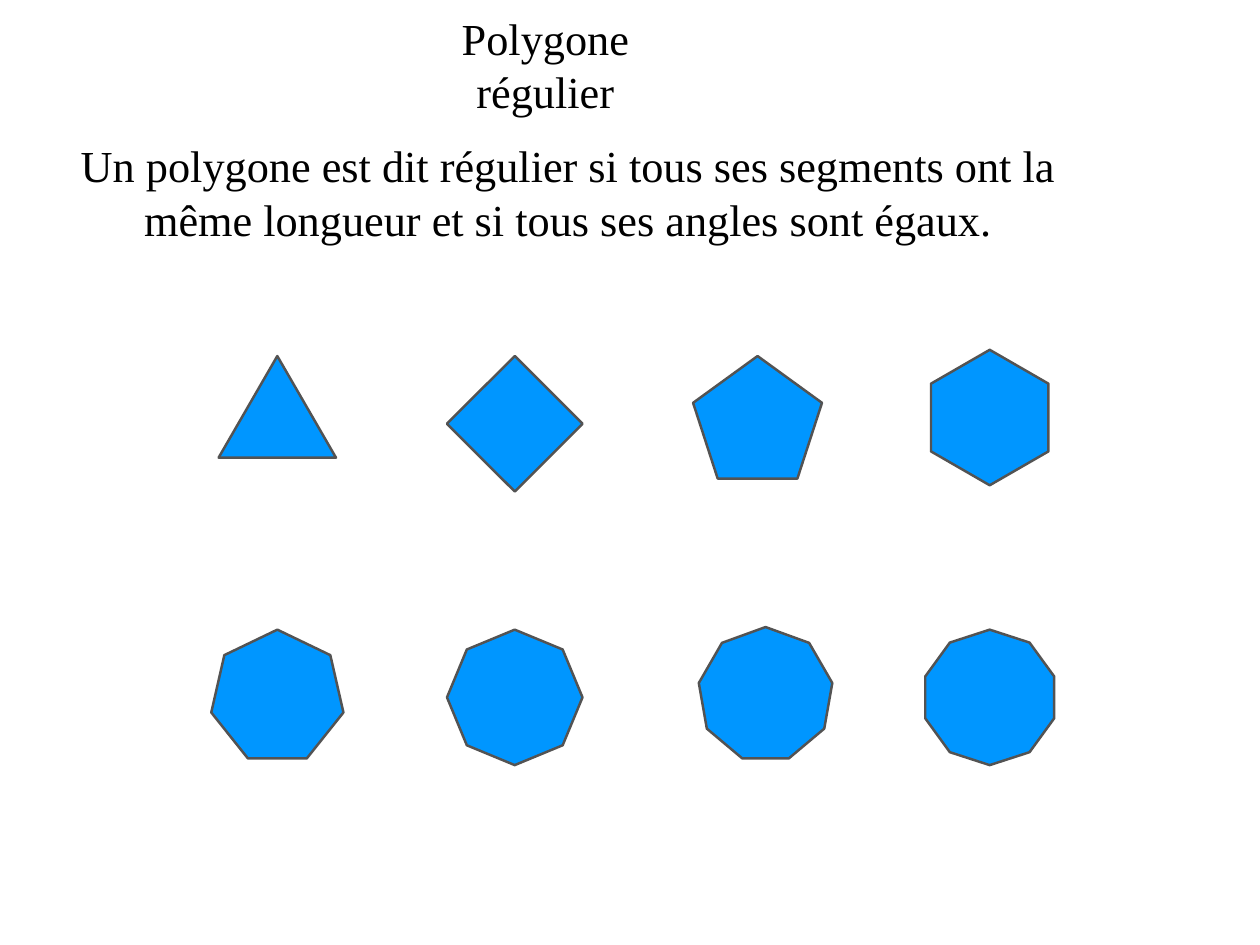
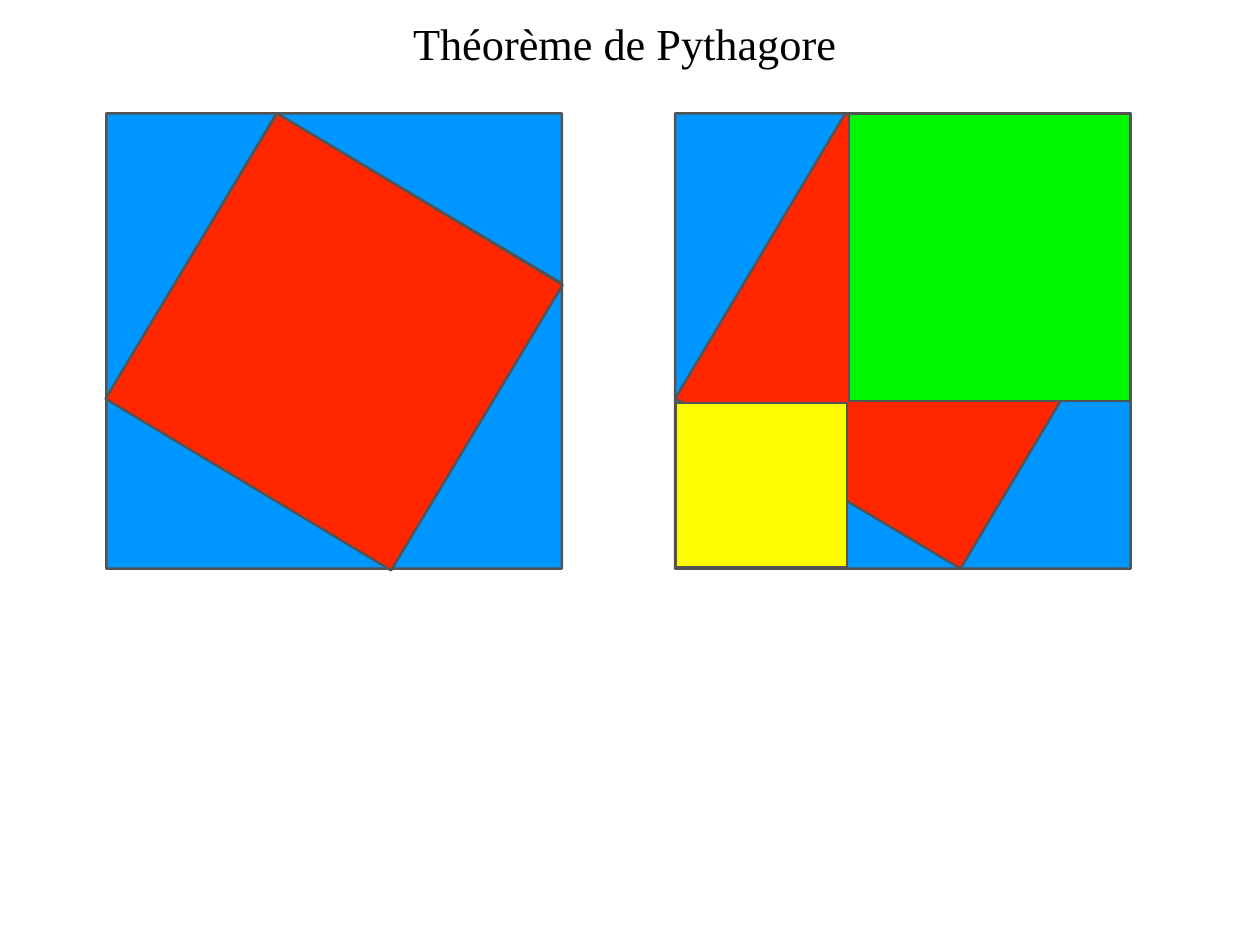
from dataclasses import dataclass
from math import cos, pi, sin

from pptx import Presentation
from pptx.dml.color import RGBColor
from pptx.enum.shapes import MSO_SHAPE
from pptx.enum.text import MSO_ANCHOR, PP_ALIGN
from pptx.util import Pt

EMU_PER_PX = 9144
RECTANGLE = MSO_SHAPE.RECTANGLE
CENTER = PP_ALIGN.CENTER
MIDDLE = MSO_ANCHOR.MIDDLE
PRESET_BY_SIDES = {
    3: MSO_SHAPE.ISOSCELES_TRIANGLE,
    4: MSO_SHAPE.DIAMOND,
    5: MSO_SHAPE.REGULAR_PENTAGON,
    7: MSO_SHAPE.HEPTAGON,
}


@dataclass(frozen=True)
class Theme:
    """Colours, type and line sizes shared by the slides."""
    blue: str = "0096FF"
    red: str = "FF2600"
    yellow: str = "FFFB00"
    green: str = "00F900"
    outline: str = "535353"
    text: str = "000000"
    font: str = "Times New Roman"
    text_size: float = 36
    line_spacing: float = 43.5
    outline_width: float = 2
    inset: int = 6


THEME = Theme()
SLIDE_SIZE = (1422, 1067)
POLYGON_DIAMETER = 153
POLYGONS = [
    (3, 313, 402), (4, 581, 402), (5, 855, 402), (6, 1117, 395),
    (7, 313, 711), (8, 581, 711), (9, 864, 708), (10, 1117, 711),
]
LONG_LEG = 322
SHORT_LEG = 192
SQUARE_SIDE = LONG_LEG + SHORT_LEG
SQUARE_TOP = 128
LEFT_SQUARE = 120
RIGHT_SQUARE = 762


def px(length):
    """Turn px into EMU."""
    return round(length * EMU_PER_PX)


def add_text(slide, text, box, *, size=THEME.text_size, color=THEME.text,
             font=THEME.font, align=CENTER, anchor=MIDDLE):
    """Add one wrapped paragraph in a text box."""
    frame = slide.shapes.add_textbox(*map(px, box)).text_frame
    frame.word_wrap = True
    frame.vertical_anchor = anchor
    frame.margin_left = frame.margin_right = px(THEME.inset)
    frame.margin_top = frame.margin_bottom = px(THEME.inset)
    paragraph = frame.paragraphs[0]
    paragraph.alignment = align
    paragraph.line_spacing = Pt(THEME.line_spacing)
    run = paragraph.add_run()
    run.text = text
    run.font.name = font
    run.font.size = Pt(size)
    run.font.color.rgb = RGBColor.from_string(color)


def paint(shape, fill):
    """Give a shape its fill and the shared outline."""
    shape.shadow.inherit = False
    shape.fill.solid()
    shape.fill.fore_color.rgb = RGBColor.from_string(fill)
    shape.line.color.rgb = RGBColor.from_string(THEME.outline)
    shape.line.width = Pt(THEME.outline_width)


def add_preset(slide, preset, box, fill, rotation=0):
    """Add a painted preset shape."""
    shape = slide.shapes.add_shape(preset, *map(px, box))
    shape.rotation = rotation
    paint(shape, fill)


def add_outline(slide, points, fill):
    """Add a painted closed freeform through the points."""
    start, *others = [(px(x), px(y)) for x, y in points]
    builder = slide.shapes.build_freeform(*start)
    builder.add_line_segments(others, close=True)
    paint(builder.convert_to_shape(), fill)


def add_regular_polygon(slide, sides, center_x, top):
    """Add a regular polygon that stands with one corner at the top."""
    radius = POLYGON_DIAMETER / 2
    angles = [2 * pi * corner / sides for corner in range(sides)]
    points = [(center_x + radius * sin(angle), top + radius - radius * cos(angle))
              for angle in angles]
    if sides not in PRESET_BY_SIDES:
        add_outline(slide, points, THEME.blue)
        return
    columns, rows = zip(*points)
    left = min(columns)
    box = (left, top, max(columns) - left, max(rows) - top)
    add_preset(slide, PRESET_BY_SIDES[sides], box, THEME.blue)


def add_corner_triangles(slide, left):
    """Add four equal right triangles, turned by quarters inside a square."""
    corners = [(0, LONG_LEG), (0, SQUARE_SIDE), (LONG_LEG, SQUARE_SIDE)]
    for _ in range(4):
        points = [(left + x, SQUARE_TOP + y) for x, y in corners]
        add_outline(slide, points, THEME.blue)
        corners = [(y, SQUARE_SIDE - x) for x, y in corners]


def build_polygon_slide(slide):
    """Define regular polygons and show those with three to ten sides."""
    add_text(slide, "Polygone régulier", (514, 6, 203, 133))
    for sides, center_x, top in POLYGONS:
        add_regular_polygon(slide, sides, center_x, top)
    add_text(slide, "Un polygone est dit régulier si tous ses segments ont la "
             "même longueur et si tous ses angles sont égaux.",
             (80, 150, 1122, 133))


def build_pythagoras_slide(slide):
    """Show the two dissected squares of the Pythagorean theorem."""
    add_corner_triangles(slide, LEFT_SQUARE)
    add_preset(slide, RECTANGLE, (189, 198, 376, 376), THEME.red, rotation=121)
    add_preset(slide, RECTANGLE,
               (RIGHT_SQUARE, SQUARE_TOP, SQUARE_SIDE, SQUARE_SIDE), THEME.red)
    add_corner_triangles(slide, RIGHT_SQUARE)
    add_preset(slide, RECTANGLE, (763, 455, 193, 186), THEME.yellow)
    add_preset(slide, RECTANGLE, (958, SQUARE_TOP, 318, 325), THEME.green)
    add_text(slide, "Théorème de Pythagore", (455, 14, 500, 68))


def main():
    """Build and save the presentation."""
    presentation = Presentation()
    presentation.slide_width, presentation.slide_height = map(px, SLIDE_SIZE)
    blank = presentation.slide_layouts[6]
    for build in (build_polygon_slide, build_pythagoras_slide):
        build(presentation.slides.add_slide(blank))
    presentation.save("out.pptx")


if __name__ == "__main__":
    main()
